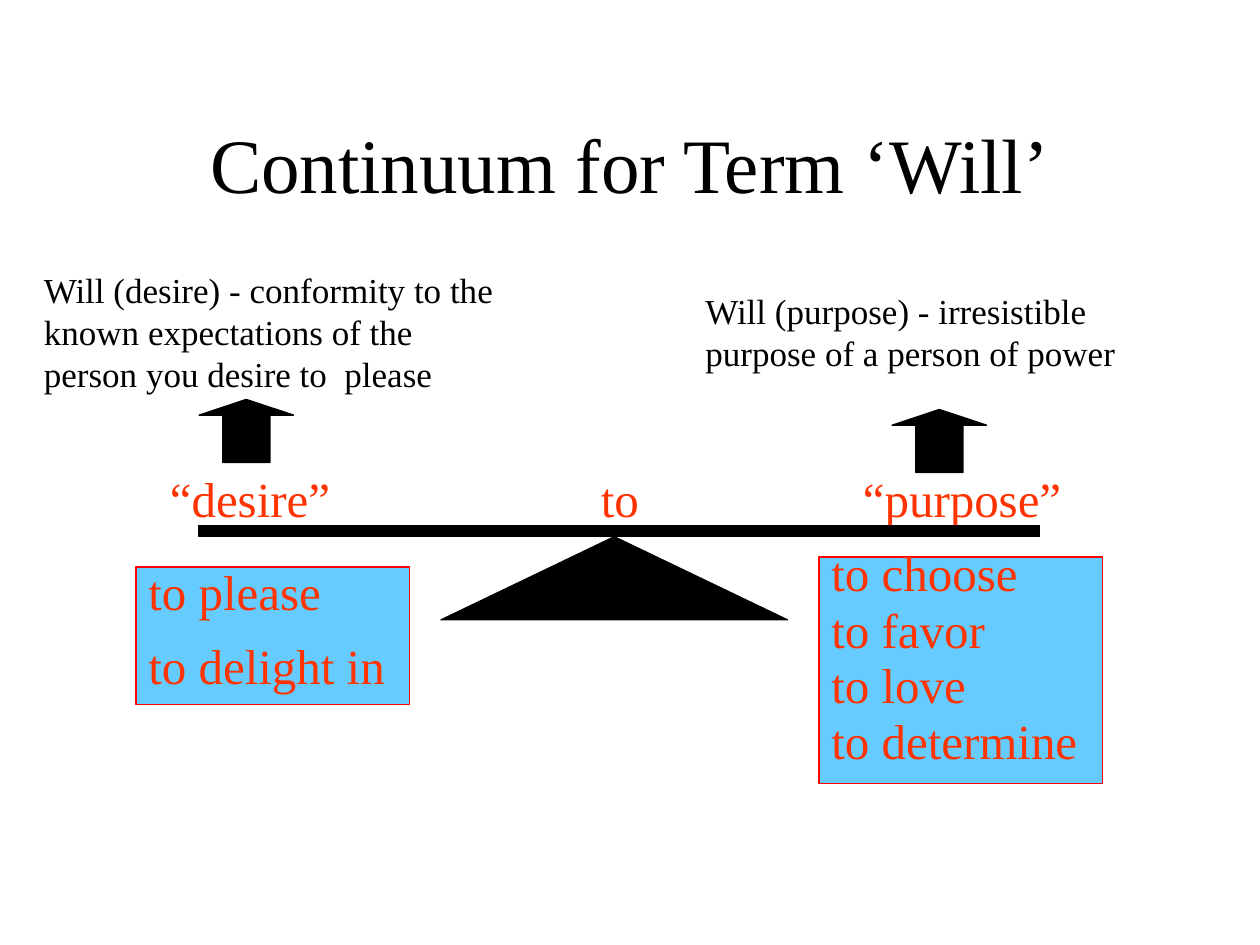
from pptx import Presentation
from pptx.dml.color import RGBColor
from pptx.enum.shapes import MSO_SHAPE
from pptx.enum.text import MSO_ANCHOR, PP_ALIGN
from pptx.util import Inches, Pt

LEFT, CENTER = PP_ALIGN.LEFT, PP_ALIGN.CENTER
TOP, MIDDLE = MSO_ANCHOR.TOP, MSO_ANCHOR.MIDDLE
RECT, TRIANGLE, UP_ARROW = (MSO_SHAPE.RECTANGLE, MSO_SHAPE.ISOSCELES_TRIANGLE,
                            MSO_SHAPE.UP_ARROW)

BLACK = RGBColor(0x00, 0x00, 0x00)
ORANGE = RGBColor(0xFF, 0x33, 0x00)
RED = RGBColor(0xFF, 0x00, 0x00)
SKY = RGBColor(0x66, 0xCC, 0xFF)
FONT = "Times New Roman"

# Content: positions are (left, top, width, height) in inches
TITLE = "Continuum for Term ‘Will’"
LABEL_TOP, LABEL_H = 3.67, 0.57
LABELS = [  # text, left, width, alignment
    ("“desire”", 1.25, 1.92, LEFT),
    ("to", 4.42, 1, CENTER),
    ("“purpose”", 6.75, 1.92, LEFT),
]
BALANCE = [
    (TRIANGLE, (3.5, 4.26, 2.75, 0.66)),
    (RECT, (1.58, 4.17, 6.67, 0.09)),
]
MEANINGS = [  # box, lines of (text, line spacing)
    ((1.08, 4.5, 2.17, 1.09), [("to please", 0.8), ("to delight in", 0.8)]),
    ((6.5, 4.42, 2.25, 1.8), [("to choose", 0.6), ("to favor", 0.5),
                              ("to love", 0.5), ("to determine", 0.5)]),
]
DEFINITIONS = [  # text, text box, arrow
    ("Will (desire) - conformity to the known expectations of the person "
     "you desire to  please", (0.25, 2.08, 3.83, 1.1), (1.58, 3.17, 0.75, 0.5)),
    ("Will (purpose) - irresistible purpose of a person of power",
     (5.5, 2.25, 3.83, 0.77), (7.08, 3.25, 0.75, 0.5)),
]


def write(shape, lines, size, color, align=LEFT, anchor=TOP):
    tf = shape.text_frame
    tf.word_wrap = True
    tf.vertical_anchor = anchor
    for i, (text, spacing) in enumerate(lines):
        p = tf.paragraphs[0] if i == 0 else tf.add_paragraph()
        p.alignment, p.line_spacing = align, spacing
        if i:
            p.space_before = Pt(15)
        r = p.add_run()
        r.text = text
        r.font.name, r.font.size = FONT, Pt(size)
        r.font.color.rgb = color


def add_text(box, text, *style):
    write(s.shapes.add_textbox(*map(Inches, box)), [(text, 1.0)], *style)


def add_shape(kind, box, fill=BLACK, line=BLACK):
    sp = s.shapes.add_shape(kind, *map(Inches, box))
    sp.shadow.inherit = False
    sp.fill.solid()
    sp.fill.fore_color.rgb = fill
    sp.line.color.rgb = line
    sp.line.width = Pt(0.75)
    return sp


prs = Presentation()
prs.slide_width, prs.slide_height = Inches(10), Inches(7.5)
s = prs.slides.add_slide(prs.slide_layouts[5])

# Title
title = s.shapes.title
title.left, title.top, title.width, title.height = map(Inches, (0.75, 0.67, 8.5, 1.25))
write(title, [(TITLE, 1.0)], 44, BLACK, CENTER, MIDDLE)

# Labels on the beam
for text, left, width, align in LABELS:
    add_text((left, LABEL_TOP, width, LABEL_H), text, 28, ORANGE, align)

# Fulcrum and beam
for kind, box in BALANCE:
    add_shape(kind, box)

# Meanings under each end
for box, lines in MEANINGS:
    write(add_shape(RECT, box, SKY, RED), lines, 28, ORANGE)

# Definitions with arrows pointing up to them
for text, box, arrow_box in DEFINITIONS:
    add_text(box, text, 20, BLACK)
    arrow = add_shape(UP_ARROW, arrow_box)
    arrow.adjustments[0], arrow.adjustments[1] = 0.5, 0.25

prs.save("out.pptx")
